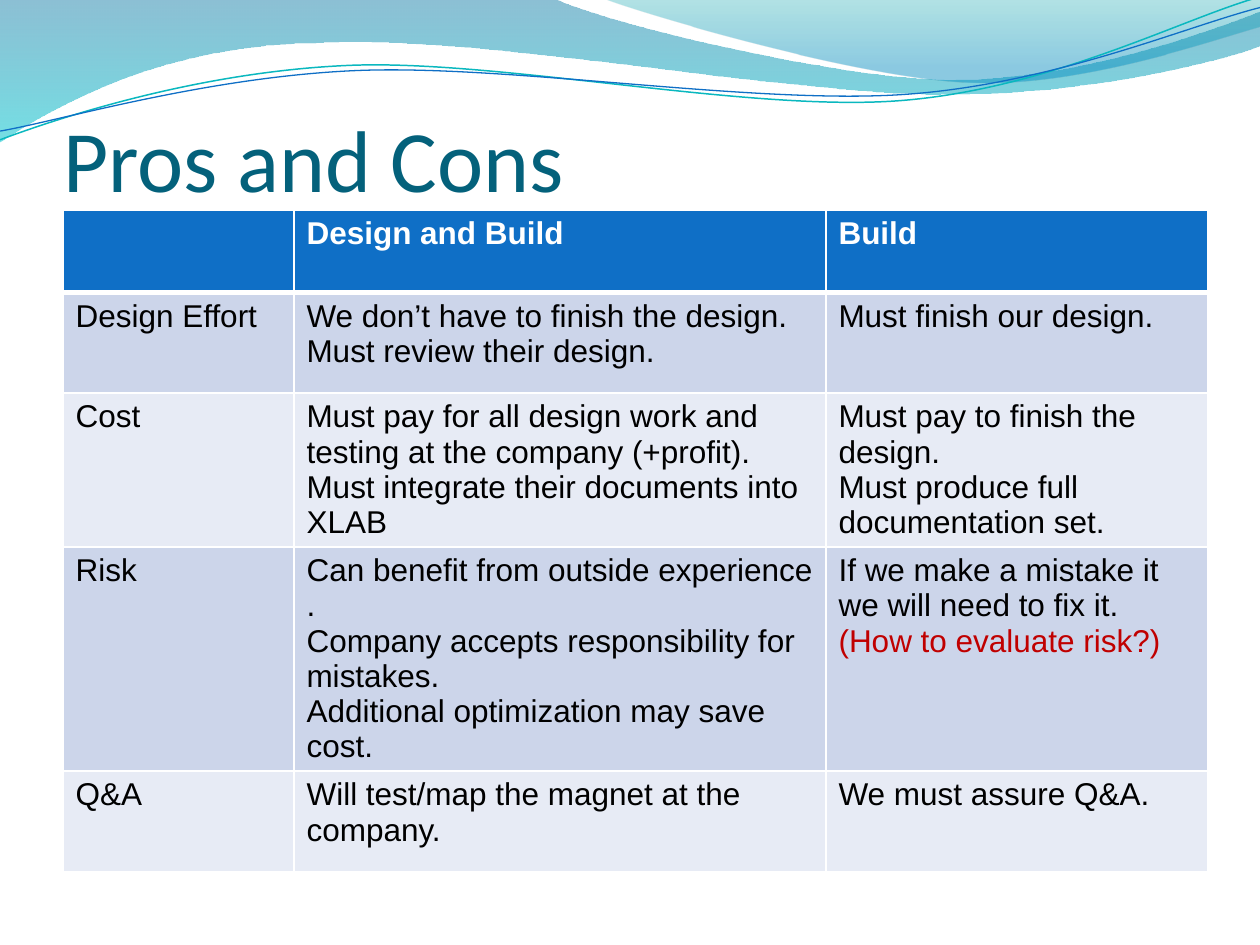
from lxml import etree
from pptx import Presentation
from pptx.dml.color import RGBColor
from pptx.enum.text import MSO_ANCHOR, MSO_AUTO_SIZE, PP_ALIGN
from pptx.oxml.ns import qn
from pptx.util import Pt

BOTTOM, TOP = MSO_ANCHOR.BOTTOM, MSO_ANCHOR.TOP
LEFT, NO_FIT = PP_ALIGN.LEFT, MSO_AUTO_SIZE.NONE

WHITE = RGBColor(0xFF, 0xFF, 0xFF)
BLACK = RGBColor(0x00, 0x00, 0x00)
RED = RGBColor(0xC0, 0x00, 0x00)
TITLE_TEAL = RGBColor(0x04, 0x61, 0x7B)
BLUE = RGBColor(0x0F, 0x6F, 0xC6)
TEAL = RGBColor(0x0A, 0xB8, 0xBF)
BAND_DARK = RGBColor(0xCC, 0xD5, 0xEA)
BAND_LIGHT = RGBColor(0xE7, 0xEB, 0xF5)

# Content: each cell is a list of paragraphs
TITLE = "Pros and Cons"
RISK_QUESTION = "(How to evaluate risk?)"
ROWS = [
    ([], ["Design and Build"], ["Build"]),
    (["Design Effort"],
     ["We don’t have to finish the design.", "Must review their design."],
     ["Must finish our design."]),
    (["Cost"],
     ["Must pay for all design work and testing at the company (+profit).",
      "Must integrate their documents into XLAB"],
     ["Must pay to finish the design.", "Must produce full documentation set."]),
    (["Risk"],
     ["Can benefit from outside experience .",
      "Company accepts responsibility for mistakes.",
      "Additional optimization may save cost."],
     ["If we make a mistake it we will need to fix it.", RISK_QUESTION]),
    (["Q&A"], ["Will test/map the magnet at the company."], ["We must assure Q&A."]),
]
COLUMN_WIDTHS = (132, 304, 218)
HEADER_HEIGHT, ROW_HEIGHT = 47, 57.6
TABLE_LEFT, TABLE_TOP = 36, 120

# Waves: two numbers are a straight step, six are a cubic curve
WAVE_FILLS = [
    ([(0, -0.7), (316.8, -0.7),
      (342.7, 12.2, 478.1, 45.4, 545.8, 45.4), (614.2, 45.4, 689.8, 18.7, 720, 6.5),
      (720.7, 25.9), (707.8, 31.7, 626.4, 54.7, 537.1, 54),
      (447.8, 54, 275, 20.2, 185, 24.5), (92.9, 25.2, 33.1, 59.8, -0.7, 81.4),
      (0, -0.7)],
     [(0, RGBColor(0x00, 0x74, 0xA1), 45), (1, RGBColor(0x00, 0xC6, 0xCF), 55)]),
    ([(344.9, -0.7), (366.5, 7.9, 491, 44.6, 553.7, 46.8),
      (616.3, 49.7, 691.9, 23, 720, 15.1), (720, 0), (344.9, -0.7)],
     [(0, RGBColor(0x00, 0xA1, 0xA9), 30), (0.8, RGBColor(0x00, 0x8B, 0xBF), 45)]),
]
WAVE_LINES = [
    ([(0, 79.9), (34.6, 67, 113.8, 41, 199.4, 37.4),
      (284.4, 33.8, 427, 64.1, 513.4, 57.6), (599.8, 51.1, 675.4, 10.8, 718.6, -1.4)],
     TEAL, 0.85),
    ([(0, 74.9), (33.8, 69.1, 118.1, 43.9, 203.8, 40.3),
      (290.2, 36.7, 429.8, 59.8, 516.2, 54), (601.9, 48.2, 677.5, 15.1, 720, 4.3)],
     BLUE, 0.75),
]


def add_wave(shapes, steps, close):
    """Outline the end points, then bend the curved steps."""
    ends = [(Pt(step[-2]), Pt(step[-1])) for step in steps]
    builder = shapes.build_freeform(*ends[0])
    builder.add_line_segments(ends[1:], close=close)
    wave = builder.convert_to_shape()
    wave.shadow.inherit = False
    segments = wave._element.findall(".//" + qn("a:lnTo"))
    for segment, step in zip(segments, steps[1:]):
        if len(step) == 6:
            segment.clear()
            curve = etree.Element(qn("a:cubicBezTo"))
            for x, y in zip(step[::2], step[1::2]):
                etree.SubElement(curve, qn("a:pt"), x=str(Pt(x) - wave.left),
                                 y=str(Pt(y) - wave.top))
            segment.getparent().replace(segment, curve)
    return wave


def write(frame, paragraphs, size=18, font="Arial", color=BLACK, bold=False, accents=None):
    for i, text in enumerate(paragraphs):
        paragraph = frame.add_paragraph() if i else frame.paragraphs[0]
        paragraph.alignment = LEFT
        run = paragraph.add_run()
        run.text = text
        run.font.size = Pt(size)
        run.font.name = font
        run.font.bold = bold
        run.font.color.rgb = (accents or {}).get(text, color)


def set_borders(cell, top, bottom):
    properties = cell._tc.get_or_add_tcPr()
    for side, width in (("L", 1), ("R", 1), ("T", top), ("B", bottom)):
        border = etree.SubElement(properties, qn(f"a:ln{side}"), w=str(Pt(width)))
        fill = etree.SubElement(border, qn("a:solidFill"))
        etree.SubElement(fill, qn("a:srgbClr"), val=str(WHITE))


def main():
    deck = Presentation()
    deck.slide_width, deck.slide_height = Pt(720), Pt(540)
    slide = deck.slides.add_slide(deck.slide_layouts[5])
    shapes = slide.shapes

    # Wave band across the top
    for steps, stops in WAVE_FILLS:
        wave = add_wave(shapes, steps, close=True)
        wave.line.fill.background()
        wave.fill.gradient()
        wave.fill.gradient_angle = 270
        for stop, (position, color, _) in zip(wave.fill.gradient_stops, stops):
            stop.position = position
            stop.color.rgb = color
        colors = wave._element.spPr.findall(".//" + qn("a:gs") + "/" + qn("a:srgbClr"))
        for node, (_, _, opacity) in zip(colors, stops):
            etree.SubElement(node, qn("a:alpha"), val=str(opacity * 1000))
    for steps, color, width in WAVE_LINES:
        wave = add_wave(shapes, steps, close=False)
        wave.fill.background()
        wave.line.color.rgb = color
        wave.line.width = Pt(width)

    # Title
    title = shapes.title
    title.left, title.top, title.width, title.height = Pt(36), Pt(30.2), Pt(648), Pt(90)
    frame = title.text_frame
    frame.auto_size = NO_FIT
    frame.word_wrap = True
    frame.vertical_anchor = BOTTOM
    frame.margin_left = frame.margin_right = frame.margin_bottom = 0
    frame.margin_top = Pt(3.6)
    write(frame, [TITLE], size=50, font="Calibri", color=TITLE_TEAL)

    # Comparison table
    heights = [HEADER_HEIGHT] + [ROW_HEIGHT] * (len(ROWS) - 1)
    table = shapes.add_table(len(ROWS), len(COLUMN_WIDTHS), Pt(TABLE_LEFT), Pt(TABLE_TOP),
                             Pt(sum(COLUMN_WIDTHS)), Pt(sum(heights))).table
    for column, width in zip(table.columns, COLUMN_WIDTHS):
        column.width = Pt(width)
    for r, (row, height) in enumerate(zip(ROWS, heights)):
        table.rows[r].height = Pt(height)
        header = r == 0
        band = BLUE if header else BAND_DARK if r % 2 else BAND_LIGHT
        for c, paragraphs in enumerate(row):
            cell = table.cell(r, c)
            set_borders(cell, top=3 if r == 1 else 1, bottom=3 if header else 1)
            cell.fill.solid()
            cell.fill.fore_color.rgb = band
            cell.vertical_anchor = TOP
            write(cell.text_frame, paragraphs, color=WHITE if header else BLACK,
                  bold=header, accents={RISK_QUESTION: RED})

    deck.save("out.pptx")


if __name__ == "__main__":
    main()
